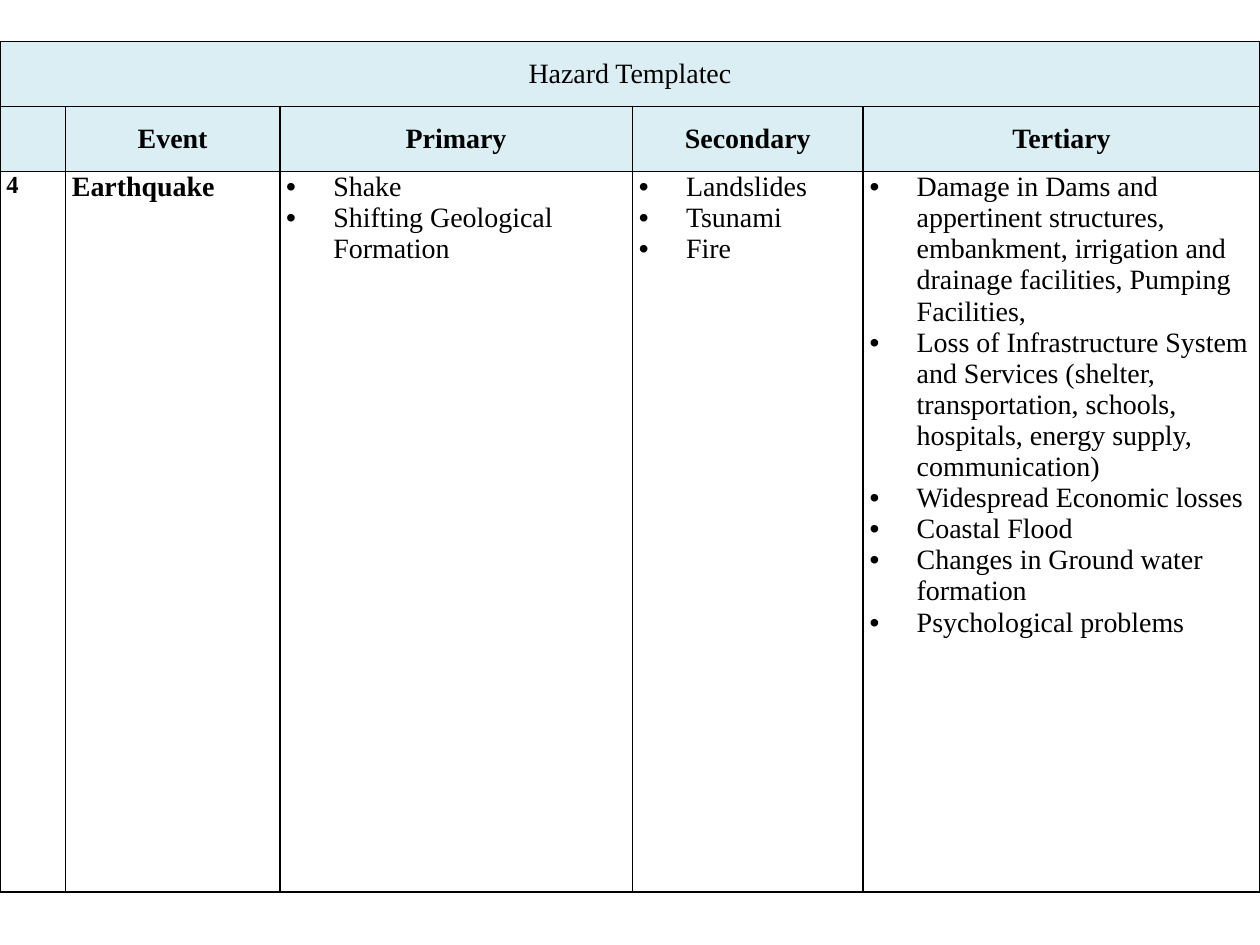
from dataclasses import dataclass

from pptx import Presentation
from pptx.dml.color import RGBColor
from pptx.enum.text import MSO_ANCHOR as Anchor, PP_ALIGN as Align
from pptx.oxml.ns import qn
from pptx.util import Cm, Pt
from lxml.etree import SubElement


@dataclass(frozen=True)
class Theme:
    font: str = "Times New Roman"
    ink: str = "000000"
    paper: str = "FFFFFF"
    header: str = "DBEEF4"
    body_size: int = 16
    number_size: int = 14
    border: float = 1


THEME = Theme()
COLUMN_WIDTHS = [1.32, 4.32, 7.11, 4.65, 8]
ROW_HEIGHTS = [1.31, 1.31, 14.52]
TITLE = "Hazard Templatec"
HEADINGS = ["", "Event", "Primary", "Secondary", "Tertiary"]
EFFECTS = [
    ["Shake", "Shifting Geological Formation"],
    ["Landslides", "Tsunami", "Fire"],
    [
        "Damage in Dams and appertinent structures, embankment, irrigation and "
        "drainage facilities, Pumping Facilities,",
        "Loss of Infrastructure System and Services (shelter, transportation, "
        "schools, hospitals, energy supply, communication)",
        "Widespread Economic losses",
        "Coastal Flood",
        "Changes in Ground water formation",
        "Psychological problems",
    ],
]


def add_borders(cell):
    properties = cell._tc.get_or_add_tcPr()
    for side in ("lnL", "lnR", "lnT", "lnB"):
        line = SubElement(properties, qn(f"a:{side}"), w=str(Pt(THEME.border)))
        fill = SubElement(line, qn("a:solidFill"))
        SubElement(fill, qn("a:srgbClr"), val=THEME.ink)


def format_cell(cell, is_header):
    cell.margin_left = cell.margin_right = Cm(0.13)
    cell.margin_top = cell.margin_bottom = 0
    cell.vertical_anchor = Anchor.MIDDLE if is_header else Anchor.TOP
    add_borders(cell)
    if is_header:
        cell.fill.solid()
        cell.fill.fore_color.rgb = RGBColor.from_string(THEME.header)
    else:
        cell.fill.background()


def add_bullet(paragraph):
    properties = paragraph._p.get_or_add_pPr()
    indent = Cm(0.95)
    properties.set("marL", str(indent))
    properties.set("indent", str(-indent))
    SubElement(properties, qn("a:buFont"), typeface="Arial")
    SubElement(properties, qn("a:buChar"), char="•")


def write_cell(cell, lines, size=THEME.body_size, bold=False, align=Align.LEFT, bullets=False):
    frame = cell.text_frame
    frame.text = "\n".join(lines)
    for paragraph in frame.paragraphs:
        paragraph.alignment = align
        if bullets:
            add_bullet(paragraph)
        font = paragraph.font
        font.name, font.size, font.bold = THEME.font, Pt(size), bold
        font.color.rgb = RGBColor.from_string(THEME.ink)


def add_hazard_table(slide):
    frame = slide.shapes.add_table(
        len(ROW_HEIGHTS), len(COLUMN_WIDTHS), 0, Cm(0.84),
        Cm(sum(COLUMN_WIDTHS)), Cm(sum(ROW_HEIGHTS)))
    table = frame.table
    table.first_row = table.horz_banding = False
    for column, width in zip(table.columns, COLUMN_WIDTHS):
        column.width = Cm(width)
    for index, height in enumerate(ROW_HEIGHTS):
        row = table.rows[index]
        row.height = Cm(height)
        for cell in row.cells:
            format_cell(cell, is_header=index < 2)
    table.cell(0, 0).merge(table.cell(0, len(COLUMN_WIDTHS) - 1))
    return table


def main():
    presentation = Presentation()
    presentation.slide_width, presentation.slide_height = Cm(25.4), Cm(19.05)
    slide = presentation.slides.add_slide(presentation.slide_layouts[6])
    background = slide.background.fill
    background.solid()
    background.fore_color.rgb = RGBColor.from_string(THEME.paper)

    table = add_hazard_table(slide)
    write_cell(table.cell(0, 0), [TITLE], align=Align.CENTER)
    for column, heading in enumerate(HEADINGS):
        write_cell(table.cell(1, column), [heading], bold=True, align=Align.CENTER)
    write_cell(table.cell(2, 0), ["4"], size=THEME.number_size, bold=True)
    write_cell(table.cell(2, 1), ["Earthquake"], bold=True)
    for column, effects in enumerate(EFFECTS, start=2):
        write_cell(table.cell(2, column), effects, bullets=True)

    presentation.save("out.pptx")


if __name__ == "__main__":
    main()
